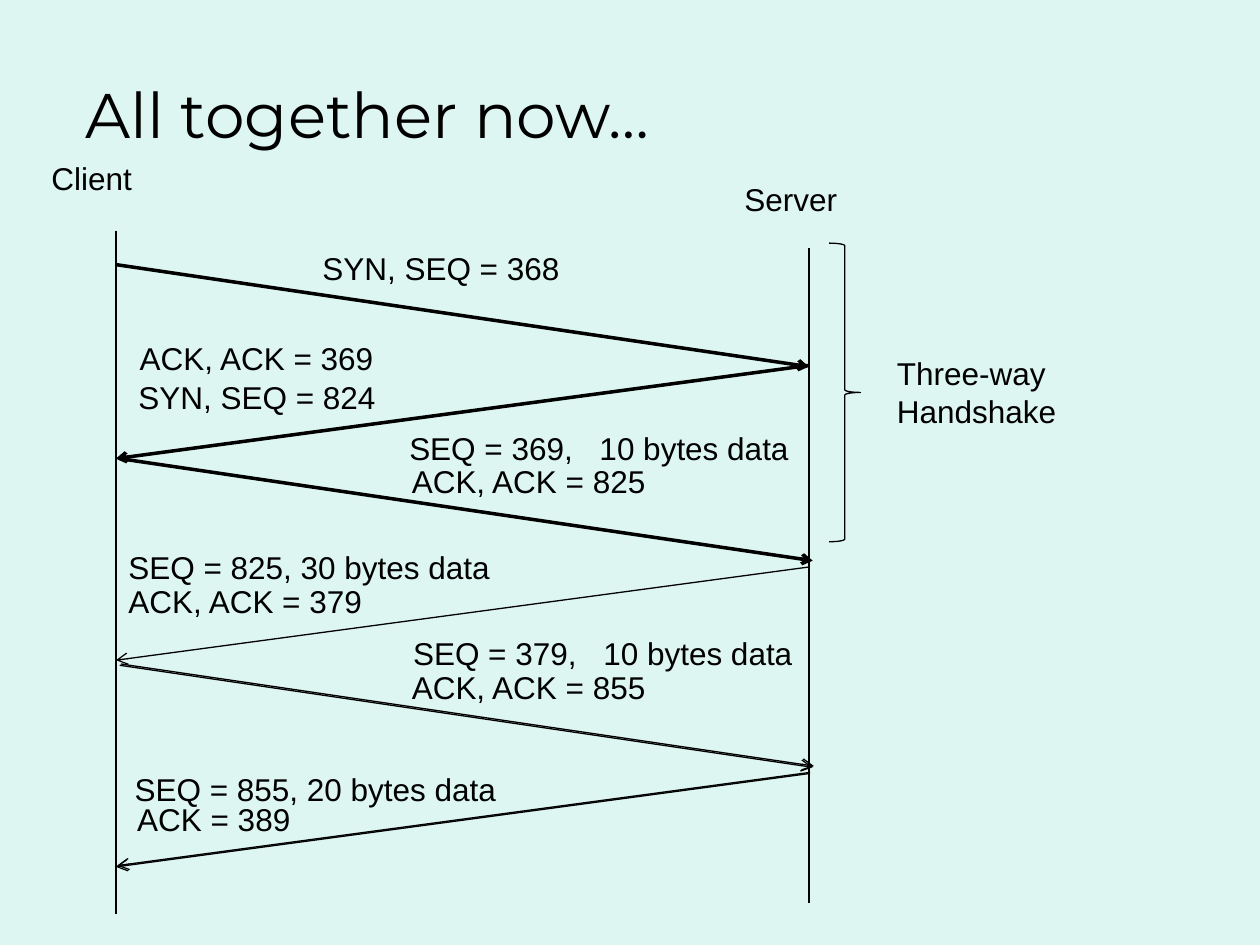
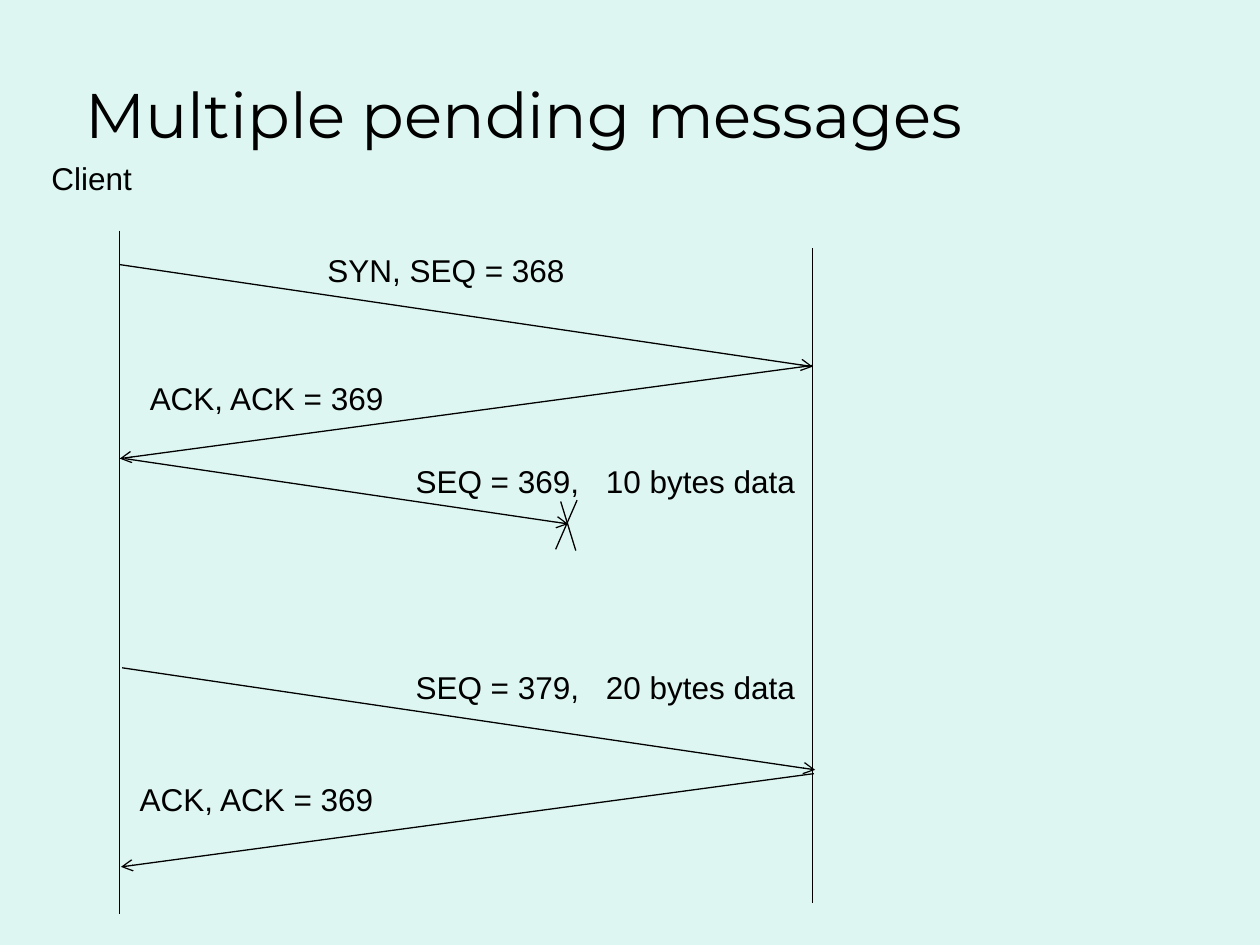
from dataclasses import dataclass

from lxml import etree
from pptx import Presentation
from pptx.dml.color import RGBColor
from pptx.enum.shapes import MSO_CONNECTOR, MSO_SHAPE
from pptx.enum.text import MSO_ANCHOR
from pptx.oxml.ns import qn
from pptx.util import Inches, Pt


@dataclass(frozen=True)
class Theme:
    background: RGBColor = RGBColor(0xDE, 0xF6, 0xF1)
    ink: RGBColor = RGBColor(0, 0, 0)
    title_font: str = "Montserrat"
    body_font: str = "Arial"
    title_size: int = 36
    body_size: int = 18
    thin: float = 0.75
    thick: float = 2


THEME = Theme()

SPAN = 5.5                # distance between the client and server lifelines
REQUEST_DROP = 0.81       # time a message takes, drawn downwards
REPLY_DROP = 0.74
CLIENT_LIFE = (1.83, 7.25)
SERVER_LIFE = (1.97, 7.17)
DATA_TAB = 1.51           # where the byte count starts in a data message

# labels: (left, top, width, text)
# requests: (offset from client line, start y, share of the span reached, weight)
# replies: (offset from server line, start y, weight)
SLIDES = [
    {
        "title": "All together now…",
        "client_x": 0.92,
        "requests": [
            (0, 2.1, 1, THEME.thick),
            (0.03, 3.64, 1, THEME.thick),
            (0.03, 5.28, 1, THEME.thin),
            (0.04, 5.27, 1, THEME.thin),
        ],
        "replies": [
            (0, 2.9, THEME.thick),
            (0, 4.5, THEME.thin),
            (0, 6.14, THEME.thin),
            (0.01, 6.13, THEME.thin),
        ],
        "labels": [
            (0.31, 1.21, 1.21, "Client"),
            (5.81, 1.38, 1.21, "Server"),
            (2.46, 1.93, 2.42, "SYN, SEQ = 368"),
            (1.01, 2.64, 2.42, "ACK, ACK = 369"),
            (1, 2.95, 2.42, "SYN, SEQ = 824"),
            (3.15, 3.36, 3.54, "SEQ = 369,\t10 bytes data"),
            (3.17, 3.62, 3.54, "ACK, ACK = 825"),
            (0.92, 4.3, 3.38, "SEQ = 825, 30 bytes data"),
            (0.92, 4.57, 3.38, "ACK, ACK = 379"),
            (3.18, 4.98, 3.54, "SEQ = 379,\t10 bytes data"),
            (3.17, 5.25, 3.54, "ACK, ACK = 855"),
            (0.97, 6.06, 3.38, "SEQ = 855, 20 bytes data"),
            (0.99, 6.3, 3.38, "ACK = 389"),
            (7.02, 2.76, 1.81, "Three-way Handshake"),
        ],
        "handshake_brace": (6.58, 1.93, 0.25, 2.37),
    },
    {
        "title": "Multiple pending messages",
        "client_x": 0.95,
        "requests": [
            (0, 2.1, 1, THEME.thin),
            (0.04, 3.64, 0.64, THEME.thin),
            (0.02, 5.3, 1, THEME.thin),
        ],
        "replies": [
            (0, 2.9, THEME.thin),
            (0.01, 6.14, THEME.thin),
        ],
        "labels": [
            (0.31, 1.21, 1.21, "Client"),
            (2.5, 1.94, 2.42, "SYN, SEQ = 368"),
            (1.09, 2.96, 2.42, "ACK, ACK = 369"),
            (3.2, 3.62, 3.54, "SEQ = 369,\t10 bytes data"),
            (3.2, 5.25, 3.54, "SEQ = 379,\t20 bytes data"),
            (1.01, 6.14, 3.38, "ACK, ACK = 369"),
        ],
        "loss_cross": [(4.45, 3.98, 4.57, 4.37), (4.58, 3.97, 4.41, 4.36)],
    },
]


def add_text(s, box, text, font, size):
    tf = s.shapes.add_textbox(*map(Inches, box)).text_frame
    tf.word_wrap = True
    p = tf.paragraphs[0]
    p.text = text
    if "\t" in text:
        tabs = etree.SubElement(p._p.get_or_add_pPr(), qn("a:tabLst"))
        etree.SubElement(tabs, qn("a:tab"), pos=str(Inches(DATA_TAB)), algn="l")
    for r in p.runs:
        r.font.name = font
        r.font.size = Pt(size)
        r.font.color.rgb = THEME.ink
    return tf


def add_title(s, text):
    tf = add_text(s, (0.58, 0.58, 8.33, 0.75), text, THEME.title_font, THEME.title_size)
    tf.vertical_anchor = MSO_ANCHOR.MIDDLE
    tf.paragraphs[0].line_spacing = 0.8


def add_line(s, ends, weight=THEME.thin, arrow=False):
    c = s.shapes.add_connector(MSO_CONNECTOR.STRAIGHT, *map(Inches, ends))
    c.line.color.rgb = THEME.ink
    c.line.width = Pt(weight)
    if arrow:
        etree.SubElement(c.line._get_or_add_ln(), qn("a:tailEnd"), type="arrow")
    etree.SubElement(c._element.spPr, qn("a:effectLst"))


def add_brace(s, box):
    sp = s.shapes.add_shape(MSO_SHAPE.RIGHT_BRACE, *map(Inches, box))
    sp.shadow.inherit = False
    sp.fill.background()
    sp.line.color.rgb = THEME.ink
    sp.line.width = Pt(THEME.thin)


def add_exchange(s, client_x, requests, replies):
    """Draw both lifelines and the messages that travel between them."""
    server_x = client_x + SPAN
    for x, (top, bottom) in ((client_x, CLIENT_LIFE), (server_x, SERVER_LIFE)):
        add_line(s, (x, top, x, bottom))
    for offset, y, reach, weight in requests:
        x = client_x + offset
        add_line(s, (x, y, x + SPAN * reach, y + REQUEST_DROP * reach), weight, arrow=True)
    for offset, y, weight in replies:
        x = server_x + offset
        add_line(s, (x, y, x - SPAN, y + REPLY_DROP), weight, arrow=True)


def build_slide(prs, content):
    s = prs.slides.add_slide(prs.slide_layouts[6])
    s.background.fill.solid()
    s.background.fill.fore_color.rgb = THEME.background
    add_title(s, content["title"])
    add_exchange(s, content["client_x"], content["requests"], content["replies"])
    for left, top, width, text in content["labels"]:
        height = 0.71 if text == "Three-way Handshake" else 0.4
        add_text(s, (left, top, width, height), text, THEME.body_font, THEME.body_size)
    for stroke in content.get("loss_cross", []):
        add_line(s, stroke)
    if "handshake_brace" in content:
        add_brace(s, content["handshake_brace"])


def main():
    prs = Presentation()
    prs.slide_width = Inches(10)
    prs.slide_height = Inches(7.5)
    for content in SLIDES:
        build_slide(prs, content)
    prs.save("out.pptx")


if __name__ == "__main__":
    main()
